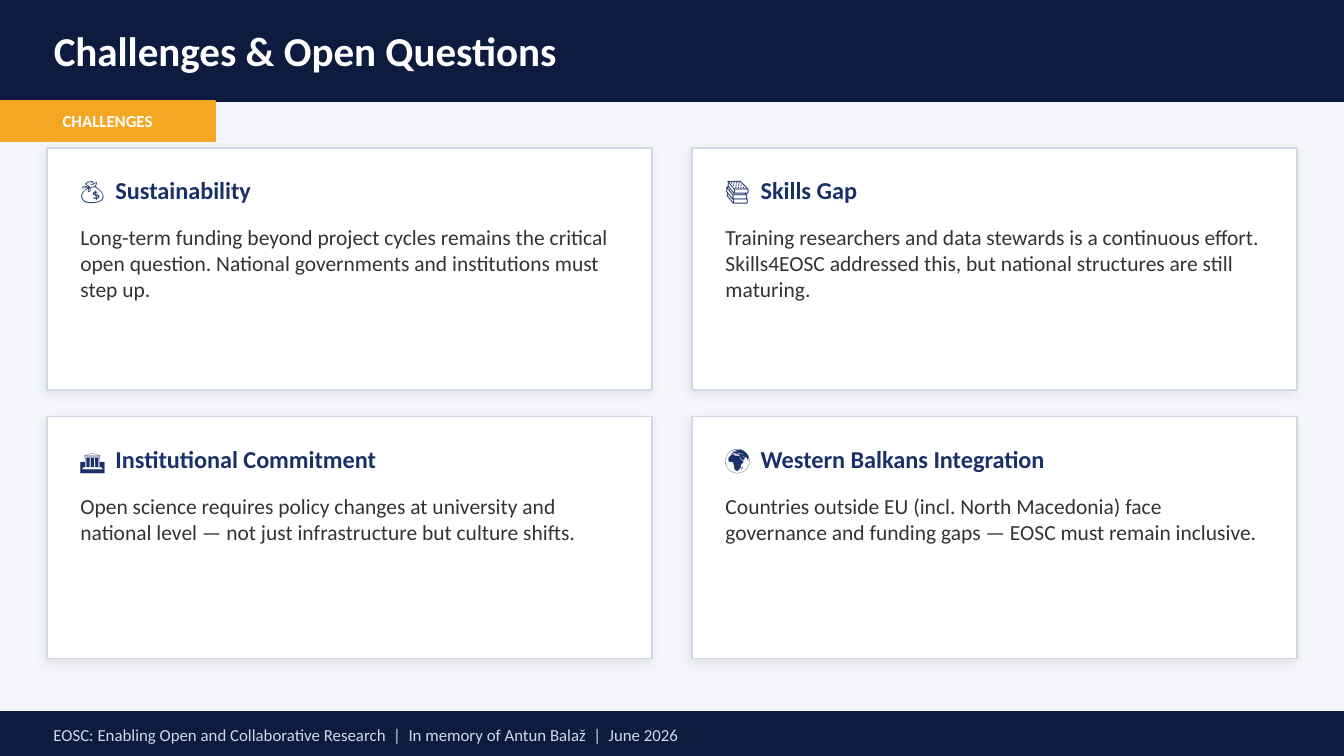
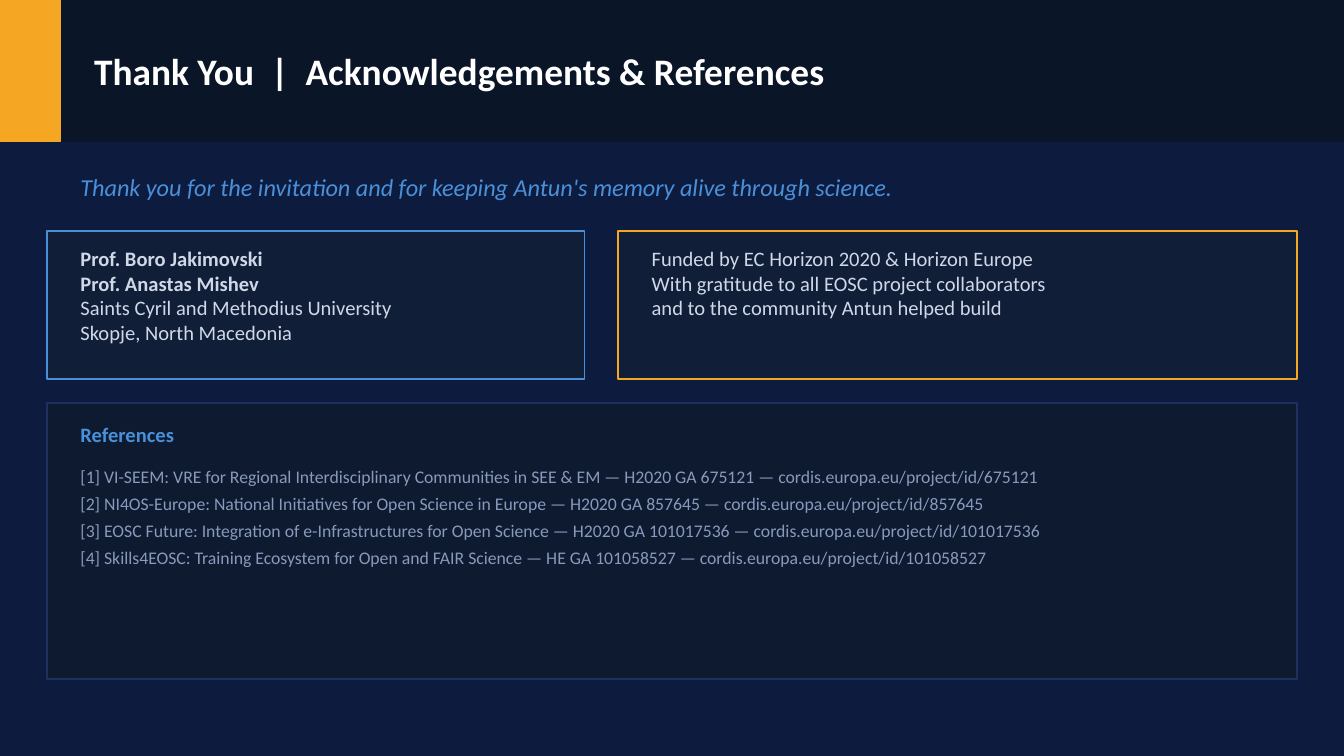
from lxml import etree
from pptx import Presentation
from pptx.dml.color import RGBColor
from pptx.enum.shapes import MSO_SHAPE as SHAPE
from pptx.enum.text import MSO_ANCHOR as ANCHOR, MSO_AUTO_SIZE as FIT, PP_ALIGN as ALIGN
from pptx.oxml import parse_xml
from pptx.oxml.ns import nsdecls
from pptx.util import Inches, Pt

# Grid: 200 columns by 112.5 rows of square cells
COLS, ROWS = 200, 112.5
CELL = Inches(10) / COLS
MARGIN = 7
INSET = 3  # from a panel's edge to its text box
INNER = COLS - 2 * (MARGIN + INSET)

# Shared look
FONT = "Calibri"
NAVY, AMBER, BLUE, WHITE = "0D1B3E", "F5A623", "4A90D9", "FFFFFF"
PALE, PAGE, INK, HEADING = "D0D8E8", "F4F6FB", "333333", "1A3068"
NIGHT, PANEL, REF_PANEL, REF_LINE, REF_TEXT = "0A1528", "111E38", "0E1A30", "1E3060", "8899BB"

FOOTER = "EOSC: Enabling Open and Collaborative Research  |  In memory of Antun Balaž  |  June 2026"
CHALLENGES = [
    ("💰  Sustainability",
     "Long-term funding beyond project cycles remains the critical open question. "
     "National governments and institutions must step up."),
    ("📚  Skills Gap",
     "Training researchers and data stewards is a continuous effort. "
     "Skills4EOSC addressed this, but national structures are still maturing."),
    ("🏛️  Institutional Commitment",
     "Open science requires policy changes at university and national level — "
     "not just infrastructure but culture shifts."),
    ("🌍  Western Balkans Integration",
     "Countries outside EU (incl. North Macedonia) face governance and funding gaps — "
     "EOSC must remain inclusive."),
]
SPEAKERS = ["Prof. Boro Jakimovski", "Prof. Anastas Mishev",
            "Saints Cyril and Methodius University", "Skopje, North Macedonia"]
THANKS = ["Funded by EC Horizon 2020 & Horizon Europe",
          "With gratitude to all EOSC project collaborators",
          "and to the community Antun helped build"]
REFERENCES = [
    "[1] VI-SEEM: VRE for Regional Interdisciplinary Communities in SEE & EM — "
    "H2020 GA 675121 — cordis.europa.eu/project/id/675121",
    "[2] NI4OS-Europe: National Initiatives for Open Science in Europe — "
    "H2020 GA 857645 — cordis.europa.eu/project/id/857645",
    "[3] EOSC Future: Integration of e-Infrastructures for Open Science — "
    "H2020 GA 101017536 — cordis.europa.eu/project/id/101017536",
    "[4] Skills4EOSC: Training Ecosystem for Open and FAIR Science — "
    "HE GA 101058527 — cordis.europa.eu/project/id/101058527",
]


def rgb(color):
    return RGBColor.from_string(color)


def grid(*cells):
    return [round(n * CELL) for n in cells]


def add_slide(prs, background):
    s = prs.slides.add_slide(prs.slide_layouts[5])
    s.background.fill.solid()
    s.background.fill.fore_color.rgb = rgb(background)
    return s


def add_box(s, area, fill, line=None):
    sp = s.shapes.add_shape(SHAPE.RECTANGLE, *grid(*area))
    sp.shadow.inherit = False
    sp.fill.solid()
    sp.fill.fore_color.rgb = rgb(fill)
    sp.line.color.rgb = rgb(line or fill)
    sp.line.width = Pt(1)
    return sp


def add_soft_shadow(sp):
    effects = sp._element.spPr.find("{*}effectLst")
    effects.append(parse_xml(
        f'<a:outerShdw {nsdecls("a")} blurRad="{Pt(6)}" dist="{Pt(2)}" dir="{135 * 60000}" '
        'algn="bl" rotWithShape="0"><a:srgbClr val="000000"><a:alpha val="8000"/>'
        '</a:srgbClr></a:outerShdw>'))


def write(sp, lines, size, color, bold=0, italic=False, align=ALIGN.LEFT,
          anchor=ANCHOR.MIDDLE, after=0):
    """Fill a frame with one paragraph per line; the first `bold` lines are bold."""
    tf = sp.text_frame
    tf.word_wrap = True
    tf.auto_size = FIT.NONE
    tf.vertical_anchor = anchor
    tf.text = "\n".join(lines)
    for i, p in enumerate(tf.paragraphs):
        p.alignment = align
        p.space_before, p.space_after = Pt(0), Pt(after)
        p.font.name, p.font.size = FONT, Pt(size)
        p.font.bold, p.font.italic = i < bold, italic
        p.font.color.rgb = rgb(color)


def add_text(s, area, lines, size, color, **style):
    write(s.shapes.add_textbox(*grid(*area)), lines, size, color, **style)


def set_title(s, area, text, size):
    sp = s.shapes.title
    sp.left, sp.top, sp.width, sp.height = grid(*area)
    write(sp, [text], size, WHITE, bold=1)
    s.shapes._spTree.append(sp._element)  # in front of its band


def add_card(s, area, heading, body):
    x, y, w, h = area
    add_soft_shadow(add_box(s, area, WHITE, PALE))
    x, w = x + INSET, w - 2 * INSET
    add_text(s, (x, y + 2, w, 8.4), [heading], 13, HEADING, bold=1)
    add_text(s, (x, y + 10.4, w, 24), [body], 11.5, INK, anchor=ANCHOR.TOP)


def add_credit(s, area, line, lines, bold=0):
    x, y, w, h = area
    add_box(s, area, PANEL, line)
    add_text(s, (x + INSET, y + 1.2, w - 2 * INSET, h - 3), lines, 11, PALE,
             bold=bold, anchor=ANCHOR.TOP)


def build_challenges(prs):
    s = add_slide(prs, PAGE)

    # Title band, section tag and footer
    add_box(s, (0, 0, COLS, 15), NAVY)
    set_title(s, (6, 0, COLS - 12, 15), "Challenges & Open Questions", 22)
    tag, footer = (0, 15, 32, 6), (0, 106, COLS, 6.6)
    add_box(s, tag, AMBER)
    add_text(s, tag, ["CHALLENGES"], 9, WHITE, bold=1, align=ALIGN.CENTER)
    add_box(s, footer, NAVY)
    add_text(s, (6, 106, COLS - 12, 6.6), [FOOTER], 9, PALE)

    # Two by two cards
    w, h, col_gap, row_gap = 90, 36, 6, 4
    for i, (heading, body) in enumerate(CHALLENGES):
        row, col = divmod(i, 2)
        area = (MARGIN + col * (w + col_gap), 22 + row * (h + row_gap), w, h)
        add_card(s, area, heading, body)


def build_thanks(prs):
    s = add_slide(prs, NAVY)
    left = MARGIN + INSET

    # Title band with accent block
    add_box(s, (0, 0, COLS, 21), NIGHT)
    add_box(s, (0, 0, 9, 21), AMBER)
    set_title(s, (12, 0, 184, 21), "Thank You  |  Acknowledgements & References", 20)
    add_text(s, (left, 23.6, INNER, 8.4),
             ["Thank you for the invitation and for keeping Antun's memory alive through science."],
             13, BLUE, italic=True)

    # Speakers and funding
    add_credit(s, (MARGIN, 34.4, 80, 22), BLUE, SPEAKERS, bold=2)
    add_credit(s, (92, 34.4, COLS - MARGIN - 92, 22), AMBER, THANKS)

    # References
    add_box(s, (MARGIN, 60, COLS - 2 * MARGIN, 41), REF_PANEL, REF_LINE)
    add_text(s, (left, 61.6, INNER, 6), ["References"], 11, BLUE, bold=1)
    add_text(s, (left, 68.4, INNER, 31), REFERENCES, 9.5, REF_TEXT,
             anchor=ANCHOR.TOP, after=3)


def main():
    prs = Presentation()
    prs.slide_width, prs.slide_height = grid(COLS, ROWS)
    build_challenges(prs)
    build_thanks(prs)
    prs.save("out.pptx")


if __name__ == "__main__":
    main()
